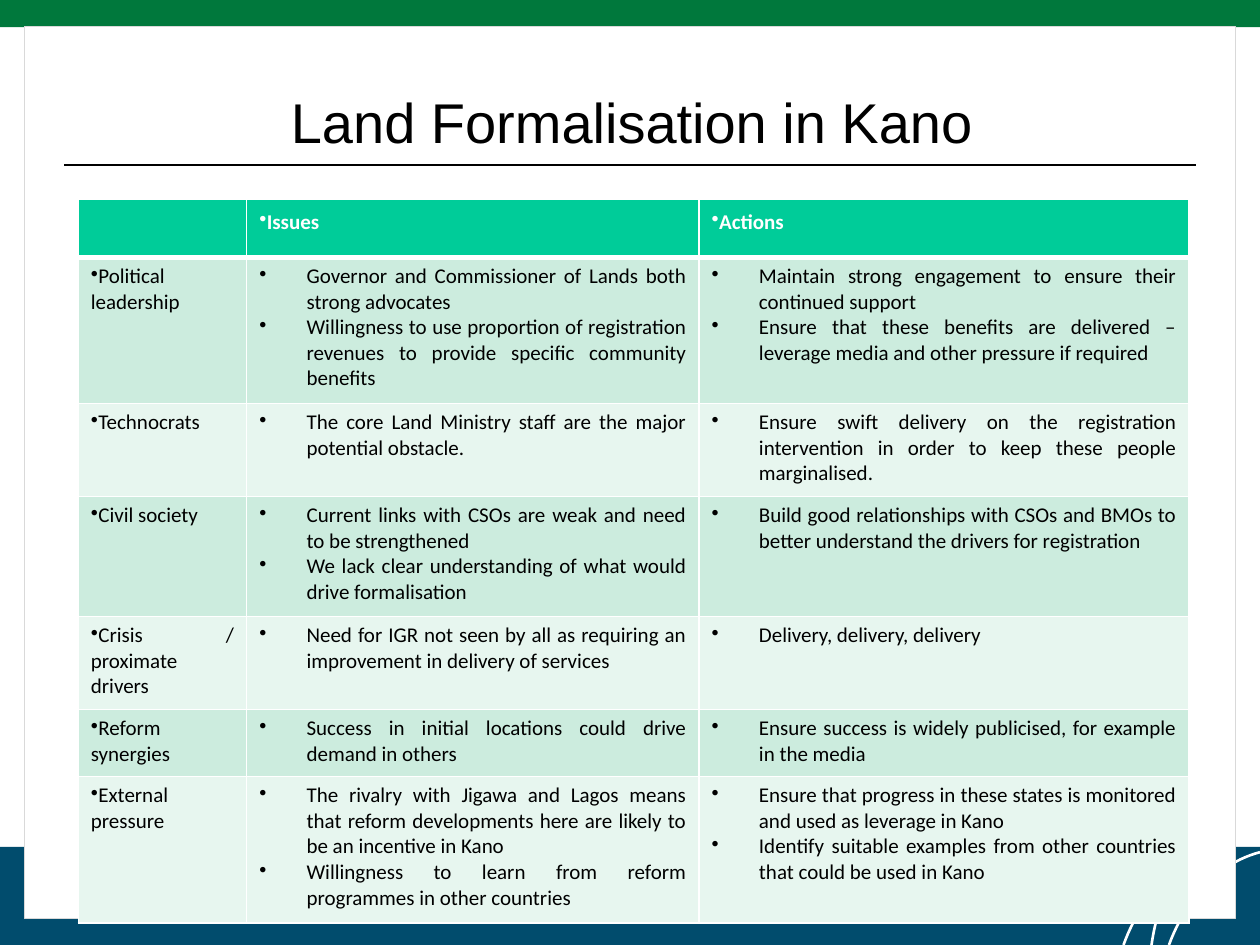
from lxml.etree import SubElement
from pptx import Presentation
from pptx.dml.color import RGBColor
from pptx.enum.shapes import MSO_CONNECTOR, MSO_SHAPE
from pptx.enum.text import MSO_ANCHOR, PP_ALIGN
from pptx.oxml import parse_xml
from pptx.oxml.ns import nsdecls, qn
from pptx.util import Pt

COLORS = {
    "navy": "014C6D", "green": "00783C", "white": "FFFFFF", "black": "000000",
    "frame": "D9D9D9", "header": "00CC99", "dark band": "CCECDE", "light band": "E7F6EF",
}
TITLE = "Land Formalisation in Kano"
HEADINGS = ["", "Issues", "Actions"]
ROWS = [
    ("Political leadership",
     ["Governor and Commissioner of Lands both strong advocates",
      "Willingness to use proportion of registration revenues to provide specific community benefits"],
     ["Maintain strong engagement to ensure their continued support",
      "Ensure that these benefits are delivered – leverage media and other pressure if required"]),
    ("Technocrats",
     ["The core Land Ministry staff are the major potential obstacle."],
     ["Ensure swift delivery on the registration intervention in order to keep these people marginalised."]),
    ("Civil society",
     ["Current links with CSOs are weak and need to be strengthened",
      "We lack clear understanding of what would drive formalisation"],
     ["Build good relationships with CSOs and BMOs to better understand the drivers for registration"]),
    ("Crisis / proximate drivers",
     ["Need for IGR not seen by all as requiring an improvement in delivery of services"],
     ["Delivery, delivery, delivery"]),
    ("Reform synergies",
     ["Success in initial locations could drive demand in others"],
     ["Ensure success is widely publicised, for example in the media"]),
    ("External pressure",
     ["The rivalry with Jigawa and Lagos means that reform developments here are likely to be an incentive in Kano",
      "Willingness to learn from reform programmes in other countries"],
     ["Ensure that progress in these states is monitored and used as leverage in Kano",
      "Identify suitable examples from other countries that could be used in Kano"]),
]
COLUMN_WIDTHS = [96.25, 258.5, 280]
ROW_HEIGHTS = [33.25, 83.5, 53.25, 68.5, 53.25, 38.25, 83.75]
PANELS = [
    ((0, 484, 720, 56), "navy", None),
    ((0, 0, 720, 15.5), "green", None),
    ((14, 15, 692, 510), "white", "frame"),
]
ARCS = [
    [(691, 483), (669.5, 493), (651.5, 514), (642, 540)],
    [(720, 487), (697, 493), (678, 513), (668, 540)],
    [(679, 483), (669, 499), (661, 519), (658, 540)],
]
ARC_STEPS = 24
BULLET_INDENT = 27


def color(name):
    return RGBColor.from_string(COLORS[name])


def apply_format(target, values):
    for name, value in values.items():
        setattr(target, name, value)


def add_panel(slide, box, fill, line):
    panel = slide.shapes.add_shape(MSO_SHAPE.RECTANGLE, *map(Pt, box))
    panel.shadow.inherit = False
    panel.fill.solid()
    panel.fill.fore_color.rgb = color(fill)
    if line:
        panel.line.color.rgb = color(line)
        panel.line.width = Pt(0.75)
    else:
        panel.line.fill.background()


def curve_point(controls, position):
    rest = 1 - position
    weights = (rest**3, 3 * rest**2 * position, 3 * rest * position**2, position**3)
    return tuple(Pt(sum(w * point[axis] for w, point in zip(weights, controls))) for axis in (0, 1))


def add_arc(slide, controls):
    points = [curve_point(controls, step / ARC_STEPS) for step in range(ARC_STEPS + 1)]
    builder = slide.shapes.build_freeform(*points[0])
    builder.add_line_segments(points[1:], close=False)
    arc = builder.convert_to_shape()
    arc.shadow.inherit = False
    arc.fill.background()
    arc.line.color.rgb = color("white")
    arc.line.width = Pt(1.5)


def add_rule(slide):
    rule = slide.shapes.add_connector(MSO_CONNECTOR.STRAIGHT, Pt(36.75), Pt(94.25), Pt(683.25), Pt(94.25))
    rule.line.color.rgb = color("black")
    rule.line.width = Pt(1.25)
    SubElement(rule._element.spPr, qn("a:effectLst"))


def place_title(slide):
    title = slide.shapes.title
    slide.shapes._spTree.append(title._element)
    apply_format(title, {"left": Pt(93.5), "top": Pt(42.5), "width": Pt(535.5), "height": Pt(68.5)})
    frame = title.text_frame
    apply_format(frame, {"text": TITLE, "vertical_anchor": MSO_ANCHOR.TOP, "margin_top": Pt(7.5)})
    paragraph = frame.paragraphs[0]
    apply_format(paragraph, {"alignment": PP_ALIGN.CENTER, "space_before": Pt(0)})
    font = paragraph.runs[0].font
    apply_format(font, {"name": "Arial", "size": Pt(32), "bold": False})
    font.color.rgb = color("black")


def style_cell(cell, fill, bottom_width):
    cell.fill.solid()
    cell.fill.fore_color.rgb = color(fill)
    properties = cell._tc.get_or_add_tcPr()
    widths = {"lnL": 1, "lnR": 1, "lnT": 1, "lnB": bottom_width}
    for index, (side, width) in enumerate(widths.items()):
        border = parse_xml(
            f'<a:{side} {nsdecls("a")} w="{Pt(width)}"><a:solidFill>'
            f'<a:srgbClr val="{COLORS["white"]}"/></a:solidFill></a:{side}>')
        properties.insert(index, border)


def write_cell(cell, texts, indent, font_color, bold, spacing):
    frame = cell.text_frame
    for index, text in enumerate(texts):
        paragraph = frame.add_paragraph() if index else frame.paragraphs[0]
        properties = paragraph._p.get_or_add_pPr()
        properties.set("marL", str(Pt(indent)))
        properties.set("indent", str(-Pt(indent)))
        SubElement(properties, qn("a:buChar"), char="•")
        apply_format(paragraph, {"alignment": PP_ALIGN.JUSTIFY, "line_spacing": spacing})
        run = paragraph.add_run()
        run.text = text
        apply_format(run.font, {"name": "Calibri", "size": Pt(12), "bold": bold})
        run.font.color.rgb = color(font_color)


def add_issue_table(slide):
    table = slide.shapes.add_table(
        len(ROW_HEIGHTS), len(COLUMN_WIDTHS), Pt(44.75), Pt(113.75),
        Pt(sum(COLUMN_WIDTHS)), Pt(sum(ROW_HEIGHTS))).table
    for column, width in zip(table.columns, COLUMN_WIDTHS):
        column.width = Pt(width)
    for row, height in zip(table.rows, ROW_HEIGHTS):
        row.height = Pt(height)
    for column, heading in enumerate(HEADINGS):
        cell = table.cell(0, column)
        style_cell(cell, "header", 3)
        if heading:
            write_cell(cell, [heading], 0, "white", True, 1.15)
    for row, (topic, issues, actions) in enumerate(ROWS, 1):
        for column, texts in enumerate(([topic], issues, actions)):
            cell = table.cell(row, column)
            style_cell(cell, "dark band" if row % 2 else "light band", 1)
            write_cell(cell, texts, BULLET_INDENT if column else 0, "black", False, 1.0)
        if row == 1:
            for column in range(len(HEADINGS)):
                top = table.cell(row, column)._tc.tcPr.find(qn("a:lnT"))
                top.set("w", str(Pt(3)))


def main():
    presentation = Presentation()
    apply_format(presentation, {"slide_width": Pt(720), "slide_height": Pt(540)})
    slide = presentation.slides.add_slide(presentation.slide_layouts[5])
    *bands, page = PANELS
    for band in bands:
        add_panel(slide, *band)
    for arc in ARCS:
        add_arc(slide, arc)
    add_panel(slide, *page)
    add_rule(slide)
    place_title(slide)
    add_issue_table(slide)
    presentation.save("out.pptx")


if __name__ == "__main__":
    main()
